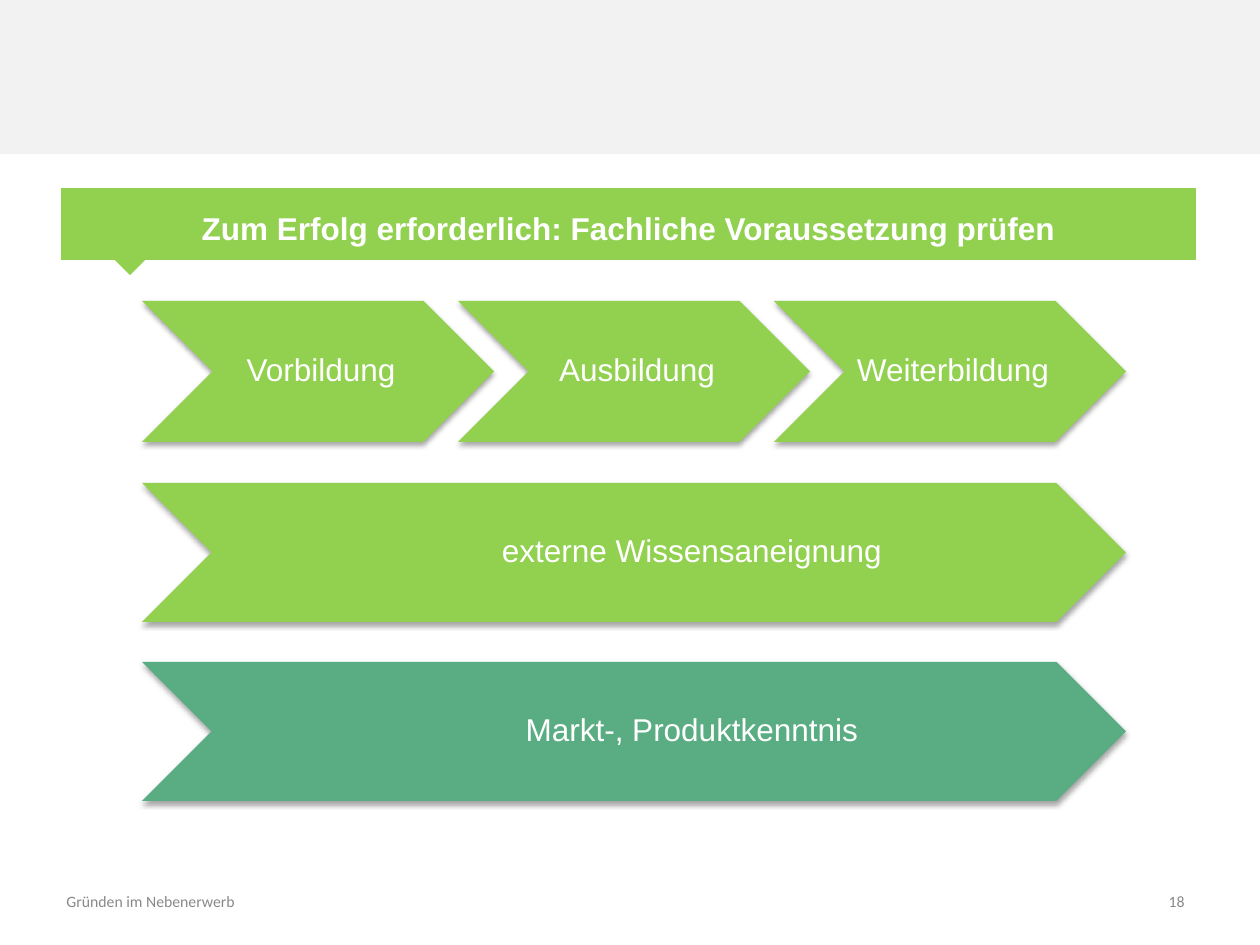
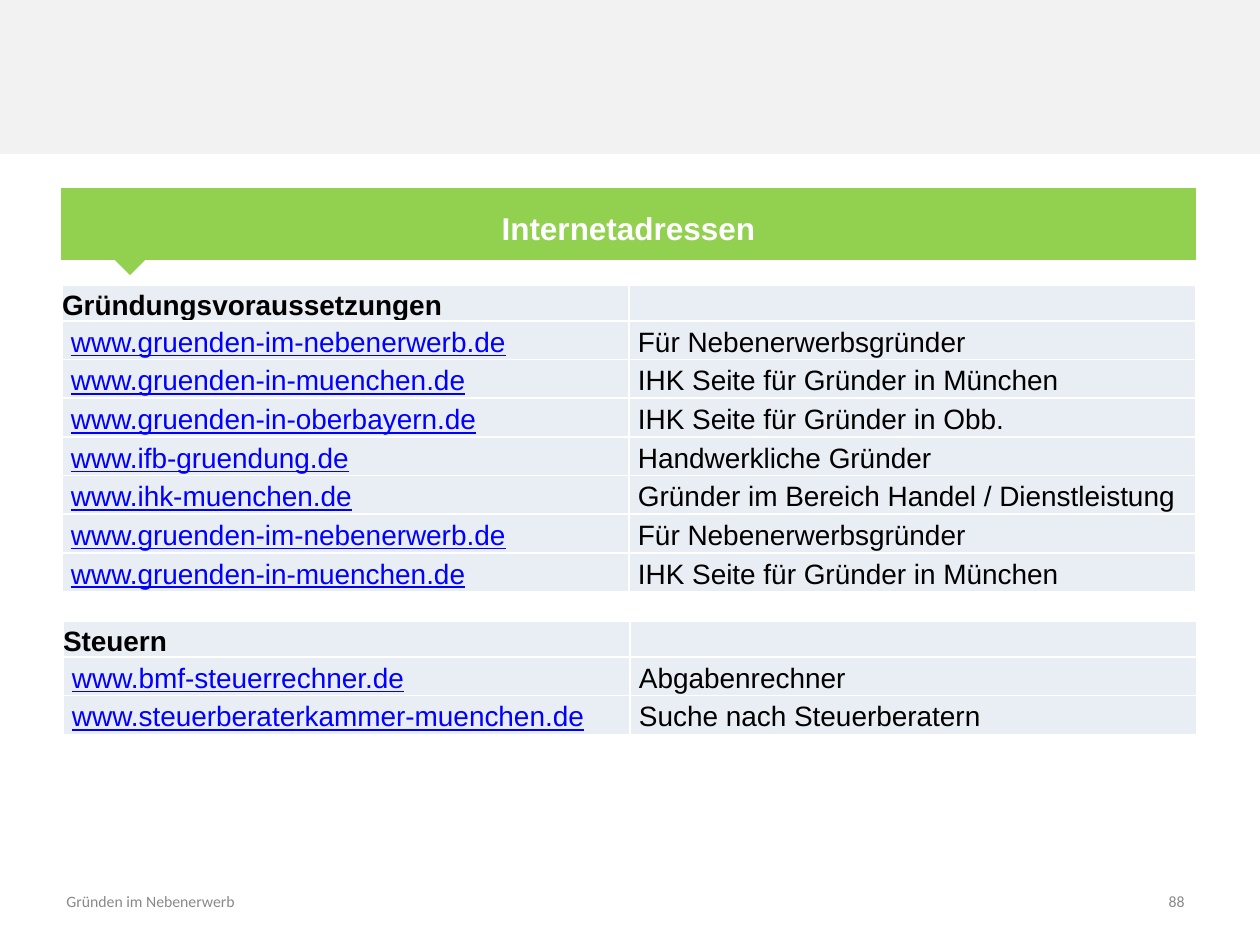
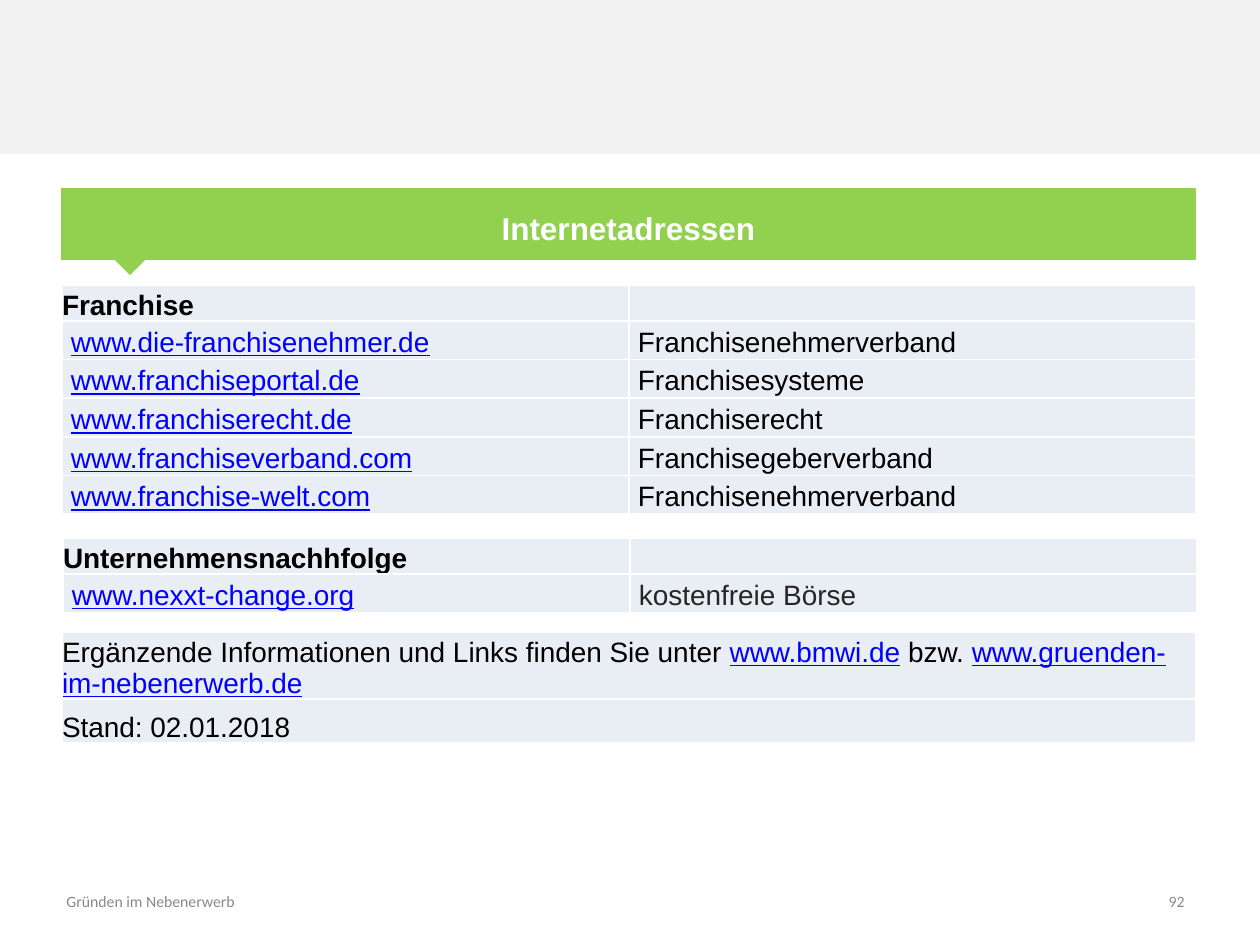
from dataclasses import dataclass

from lxml import etree
from pptx import Presentation
from pptx import util as u
from pptx.dml.color import RGBColor
from pptx.enum import shapes, text
from pptx.oxml.ns import qn

# Shared look: lengths are px at 126 to the inch
PX = 914400 / 126
PAGE_WIDTH, PAGE_HEIGHT = 1260, 945
BODY_FONT, FOOTER_FONT = "Arial", "Calibri"
FOOTER = "Gründen im Nebenerwerb"
COLORS = {
    "band": "F2F2F2",
    "green": "92D050",
    "teal": "5AAD83",
    "white": "FFFFFF",
    "black": "000000",
    "charcoal": "292526",
    "footer": "898989",
    "link": "0000FF",
    "cell": "E9EDF4",
}
ROW_HEIGHT = 36
TABLE_WIDTH = 1134
CELL_INSET = 9


@dataclass
class Chevron:
    label: str
    left: int
    top: int
    width: int
    height: int = 139
    color: str = "green"
    indent: int = 10


@dataclass
class LinkTable:
    heading: str
    left: int
    top: int
    rows: list[tuple[str, str]]
    note_color: str = "black"


def px(length: float) -> u.Emu:
    return u.Emu(round(length * PX))


def rgb(name: str) -> RGBColor:
    return RGBColor.from_string(COLORS[name])


def style_span(span, size: float, color: str, font: str = BODY_FONT, bold: bool = False) -> None:
    span.font.name = font
    span.font.size = u.Pt(size)
    span.font.bold = bold
    span.font.color.rgb = rgb(color)


def set_insets(target, left: int, top: int, right: int, bottom: int) -> None:
    target.margin_left, target.margin_top = px(left), px(top)
    target.margin_right, target.margin_bottom = px(right), px(bottom)


def add_figure(page, kind, left: int, top: int, width: int, height: int, color: str):
    figure = page.shapes.add_shape(kind, px(left), px(top), px(width), px(height))
    figure.shadow.inherit = False
    figure.fill.solid()
    figure.fill.fore_color.rgb = rgb(color)
    figure.line.fill.background()
    return figure


# Frame: band and pointer on the layout, title and footer on each page
def decorate_layout(page) -> None:
    band = add_figure(page, shapes.MSO_SHAPE.RECTANGLE, 0, 0, PAGE_WIDTH, 154, "band")
    pointer = add_figure(page, shapes.MSO_SHAPE.ISOSCELES_TRIANGLE, 115, 260, 30, 15, "green")
    pointer.rotation = 180
    for part in (band, pointer):
        page.slide_layout.shapes._spTree.append(part._element)


def add_footer_text(page, content: str, left: int, top: int, width: int, height: int,
                    align, anchor) -> None:
    box = page.shapes.add_textbox(px(left), px(top), px(width), px(height))
    frame = box.text_frame
    frame.text = content
    frame.word_wrap = True
    frame.vertical_anchor = anchor
    para = frame.paragraphs[0]
    para.alignment = align
    style_span(para.runs[0], 9, "footer", FOOTER_FONT)


def add_frame(page, heading: str, number: int) -> None:
    title = page.shapes.title
    title.left, title.top, title.width, title.height = px(61), px(188), px(1135), px(72)
    title.fill.solid()
    title.fill.fore_color.rgb = rgb("green")
    frame = title.text_frame
    frame.text = heading
    frame.auto_size = text.MSO_AUTO_SIZE.NONE
    frame.vertical_anchor = text.MSO_ANCHOR.MIDDLE
    para = frame.paragraphs[0]
    para.alignment = text.PP_ALIGN.CENTER
    para.line_spacing = 1.2
    style_span(para.runs[0], 18, "white", bold=True)

    add_footer_text(page, FOOTER, 54, 886, 765, 35, text.PP_ALIGN.LEFT, text.MSO_ANCHOR.TOP)
    add_footer_text(page, str(number), 1096, 876, 101, 50,
                    text.PP_ALIGN.RIGHT, text.MSO_ANCHOR.MIDDLE)


# Chevrons
def add_soft_shadow(figure) -> None:
    effects = figure._element.spPr.find(qn("a:effectLst"))
    shadow = etree.SubElement(effects, qn("a:outerShdw"), blurRad=str(u.Pt(3.1)),
                              dist=str(u.Pt(1.8)), dir="5400000", rotWithShape="0")
    color = etree.SubElement(shadow, qn("a:srgbClr"), val=COLORS["black"])
    etree.SubElement(color, qn("a:alpha"), val="35000")


def add_chevron(page, item: Chevron) -> None:
    figure = add_figure(page, shapes.MSO_SHAPE.CHEVRON, item.left, item.top,
                        item.width, item.height, item.color)
    add_soft_shadow(figure)
    frame = figure.text_frame
    frame.text = item.label
    frame.word_wrap = True
    frame.vertical_anchor = text.MSO_ANCHOR.MIDDLE
    set_insets(frame, item.indent, 4, 4, 4)
    para = frame.paragraphs[0]
    para.alignment = text.PP_ALIGN.CENTER
    para.line_spacing = 0.9
    style_span(para.runs[0], 18, "white")


# Tables
def add_borders(cell) -> None:
    properties = cell._tc.get_or_add_tcPr()
    for side in ("lnL", "lnR", "lnT", "lnB"):
        line = etree.SubElement(properties, qn(f"a:{side}"), w=str(u.Pt(1)))
        fill = etree.SubElement(line, qn("a:solidFill"))
        etree.SubElement(fill, qn("a:srgbClr"), val=COLORS["white"])


def fill_cell(cell, pieces: tuple[str, ...] = (), color: str = "black", inset: int = 0,
              bold: bool = False, spacing: float = 1.0,
              anchor=text.MSO_ANCHOR.BOTTOM) -> None:
    """Web addresses among the pieces are shown in blue and underlined."""
    add_borders(cell)
    cell.fill.solid()
    cell.fill.fore_color.rgb = rgb("cell")
    cell.vertical_anchor = anchor
    set_insets(cell, inset, 0, inset, 0)
    para = cell.text_frame.paragraphs[0]
    para.line_spacing = spacing
    for piece in pieces:
        is_link = piece.startswith("www.")
        span = para.add_run()
        span.text = piece
        style_span(span, 16, "link" if is_link else color, bold=bold)
        span.font.underline = is_link
    if not pieces:
        etree.SubElement(para._p, qn("a:endParaRPr"), sz="1600")


def add_grid(page, left: int, top: int, heights: list[int], columns: int):
    holder = page.shapes.add_table(len(heights), columns, px(left), px(top),
                                   px(TABLE_WIDTH), px(sum(heights)))
    grid = holder.table
    grid.first_row = grid.horz_banding = False
    for row, height in zip(grid.rows, heights):
        row.height = px(height)
    return grid


def add_link_table(page, item: LinkTable) -> None:
    grid = add_grid(page, item.left, item.top, [ROW_HEIGHT] * (len(item.rows) + 1), 2)
    fill_cell(grid.cell(0, 0), (item.heading,), bold=True)
    fill_cell(grid.cell(0, 1))
    for row, contents in enumerate(item.rows, start=1):
        for column, content in enumerate(contents):
            fill_cell(grid.cell(row, column), (content,), item.note_color, CELL_INSET,
                      spacing=1.15, anchor=text.MSO_ANCHOR.MIDDLE)


def add_closing_table(page) -> None:
    grid = add_grid(page, 62, 632, [61, 44], 1)
    fill_cell(grid.cell(0, 0), ("Ergänzende Informationen und Links finden Sie unter ",
                                "www.bmwi.de", " bzw. ", "www.gruenden-im-nebenerwerb.de"))
    fill_cell(grid.cell(1, 0), ("Stand: 02.01.2018",))


# Content
HEADINGS = [
    ("Zum Erfolg erforderlich: Fachliche Voraussetzung prüfen", 18),
    ("Internetadressen", 88),
    ("Internetadressen", 92),
]
CHEVRONS = [
    Chevron(label, 142 + 316 * step, 301, 352, 141)
    for step, label in enumerate(("Vorbildung", "Ausbildung", "Weiterbildung"))
] + [
    Chevron("externe Wissensaneignung", 142, 483, 984, indent=120),
    Chevron("Markt-, Produktkenntnis", 142, 662, 984, color="teal", indent=120),
]
FOUNDER_ROWS = [
    ("www.gruenden-im-nebenerwerb.de", "Für Nebenerwerbsgründer"),
    ("www.gruenden-in-muenchen.de", "IHK Seite für Gründer in München"),
]
START_TABLES = [
    LinkTable("Gründungsvoraussetzungen", 62, 285, [
        *FOUNDER_ROWS,
        ("www.gruenden-in-oberbayern.de", "IHK Seite für Gründer in Obb."),
        ("www.ifb-gruendung.de", "Handwerkliche Gründer"),
        ("www.ihk-muenchen.de", "Gründer im Bereich Handel / Dienstleistung"),
        *FOUNDER_ROWS,
    ]),
    LinkTable("Steuern", 63, 621, [
        ("www.bmf-steuerrechner.de", "Abgabenrechner"),
        ("www.steuerberaterkammer-muenchen.de", "Suche nach Steuerberatern"),
    ]),
]
FRANCHISE_TABLES = [
    LinkTable("Franchise", 62, 285, [
        ("www.die-franchisenehmer.de", "Franchisenehmerverband"),
        ("www.franchiseportal.de", "Franchisesysteme"),
        ("www.franchiserecht.de", "Franchiserecht"),
        ("www.franchiseverband.com", "Franchisegeberverband"),
        ("www.franchise-welt.com", "Franchisenehmerverband"),
    ]),
    LinkTable("Unternehmensnachhfolge", 63, 538, [
        ("www.nexxt-change.org", "kostenfreie Börse"),
    ], note_color="charcoal"),
]


def main() -> None:
    deck = Presentation()
    deck.slide_width, deck.slide_height = px(PAGE_WIDTH), px(PAGE_HEIGHT)
    layout = deck.slide_layouts.get_by_name("Title Only")
    pages = [deck.slides.add_slide(layout) for _ in HEADINGS]
    decorate_layout(pages[0])
    for page, (heading, number) in zip(pages, HEADINGS):
        add_frame(page, heading, number)

    skills, starting, franchise = pages
    for item in CHEVRONS:
        add_chevron(skills, item)
    for page, tables in ((starting, START_TABLES), (franchise, FRANCHISE_TABLES)):
        for item in tables:
            add_link_table(page, item)
    add_closing_table(franchise)
    deck.save("out.pptx")


if __name__ == "__main__":
    main()
